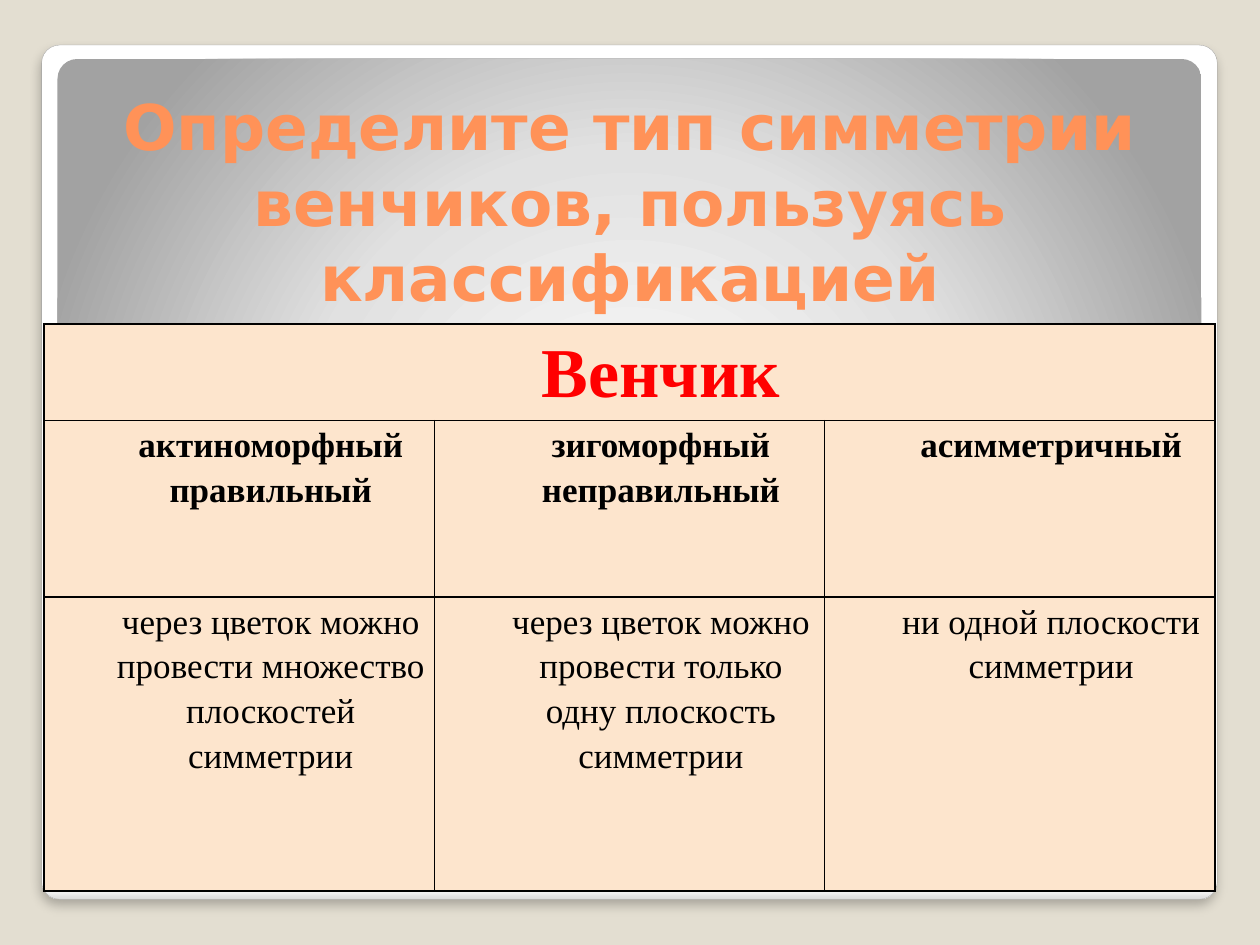
from pptx import Presentation
from pptx.dml.color import RGBColor
from pptx.enum.shapes import MSO_SHAPE
from pptx.enum.text import MSO_ANCHOR, PP_ALIGN
from pptx.oxml import parse_xml
from pptx.oxml.ns import nsdecls
from pptx.util import Cm, Pt

ROUNDED = MSO_SHAPE.ROUNDED_RECTANGLE
CENTER = PP_ALIGN.CENTER
BOTTOM = MSO_ANCHOR.BOTTOM

BEIGE = RGBColor(0xE3, 0xDE, 0xD1)
WHITE = RGBColor(0xFF, 0xFF, 0xFF)
NEAR_WHITE = RGBColor(0xF7, 0xF7, 0xF7)
PALE_GRAY = RGBColor(0xDA, 0xDA, 0xDA)
LIGHT_GRAY = RGBColor(0xE1, 0xE1, 0xE1)
MID_GRAY = RGBColor(0xA2, 0xA2, 0xA2)
EDGE_GRAY = RGBColor(0xA4, 0xA4, 0xA4)
ORANGE = RGBColor(0xFF, 0x92, 0x58)
PEACH = RGBColor(0xFD, 0xE5, 0xCD)
RED = RGBColor(0xFF, 0x00, 0x00)
BLACK = RGBColor(0x00, 0x00, 0x00)

TITLE_FONT = "DejaVu Sans"
TABLE_FONT = "Times New Roman"

TITLE = "Определите тип симметрии венчиков, пользуясь классификацией"
HEADING = "Венчик"
COROLLA_TYPES = [
    ("актиноморфный\nправильный",
     "через цветок можно провести множество плоскостей симметрии"),
    ("зигоморфный\nнеправильный",
     "через цветок можно провести только одну плоскость симметрии"),
    ("асимметричный", "ни одной плоскости симметрии"),
]
ROW_HEIGHTS = (1.91, 3.56, 5.92)

LINEAR_DOWN = '<a:lin ang="5400000" scaled="0"/>'
RADIAL_FROM_BELOW = (
    '<a:path path="circle">'
    '<a:fillToRect l="50000" t="175000" r="50000" b="-75000"/></a:path>'
)


def style_text(para, font_name, size, color, bold):
    para.alignment = CENTER
    for span in para.runs:
        span.font.name = font_name
        span.font.size = Pt(size)
        span.font.color.rgb = color
        span.font.bold = bold


def add_gradient_panel(page, box, rounding, stops, direction):
    panel = page.shapes.add_shape(ROUNDED, *map(Cm, box))
    panel.adjustments[0] = rounding
    panel.shadow.inherit = False
    panel.line.fill.background()
    stop_xml = "".join(
        f'<a:gs pos="{percent * 1000}"><a:srgbClr val="{color}"/></a:gs>'
        for percent, color in stops
    )
    panel._element.spPr.insert(2, parse_xml(
        f'<a:gradFill {nsdecls("a")} rotWithShape="1">'
        f'<a:gsLst>{stop_xml}</a:gsLst>{direction}</a:gradFill>'
    ))
    return panel


def add_card(page, box):
    left, top, width, height = box
    card = add_gradient_panel(
        page, box, 0.021,
        [(0, WHITE), (98, WHITE), (99, NEAR_WHITE), (100, PALE_GRAY)],
        LINEAR_DOWN,
    )
    card.line.color.rgb = EDGE_GRAY
    card.line.width = Pt(0.16)
    effects = card._element.spPr.find("{*}effectLst")
    effects.append(parse_xml(
        f'<a:outerShdw {nsdecls("a")} blurRad="{Pt(6)}" dist="{Pt(4)}" '
        f'dir="5400000" algn="tl" rotWithShape="0">'
        f'<a:srgbClr val="{BLACK}"><a:alpha val="25000"/></a:srgbClr>'
        f'</a:outerShdw>'
    ))
    add_gradient_panel(
        page, (left + 0.32, top + 0.28, width - 0.64, height / 2), 0.046,
        [(0, WHITE), (55, LIGHT_GRAY), (100, MID_GRAY)],
        RADIAL_FROM_BELOW,
    )


def add_title(page, box):
    title = page.shapes.add_textbox(*map(Cm, box))
    frame = title.text_frame
    frame.word_wrap = True
    frame.vertical_anchor = BOTTOM
    frame.margin_left = frame.margin_right = frame.margin_top = Cm(0.13)
    frame.margin_bottom = Cm(1.66)
    frame.text = TITLE
    style_text(frame.paragraphs[0], TITLE_FONT, 36, ORANGE, True)


def style_cell(cell):
    properties = cell._tc.get_or_add_tcPr()
    for side in ("lnL", "lnR", "lnT", "lnB"):
        properties.append(parse_xml(
            f'<a:{side} {nsdecls("a")} w="{Pt(1)}"><a:solidFill>'
            f'<a:srgbClr val="{BLACK}"/></a:solidFill></a:{side}>'
        ))
    cell.fill.solid()
    cell.fill.fore_color.rgb = PEACH
    cell.margin_left = cell.margin_right = Cm(0.17)
    cell.margin_top = cell.margin_bottom = 0


def fill_cell(cell, text, size, color, bold):
    cell.text_frame.text = text
    for para in cell.text_frame.paragraphs:
        style_text(para, TABLE_FONT, size, color, bold)
        para.line_spacing = 1.15
        indents = para._p.get_or_add_pPr()
        indents.set("marL", str(Cm(1.27)))
        indents.set("indent", "0")


def add_corolla_table(page, box):
    table = page.shapes.add_table(
        len(ROW_HEIGHTS), len(COROLLA_TYPES), *map(Cm, box)
    ).table
    for row, height in zip(table.rows, ROW_HEIGHTS):
        row.height = Cm(height)
    for cell in table.iter_cells():
        style_cell(cell)
    table.cell(0, 0).merge(table.cell(0, len(COROLLA_TYPES) - 1))
    fill_cell(table.cell(0, 0), HEADING, 40, RED, True)
    for column, (name, description) in enumerate(COROLLA_TYPES):
        fill_cell(table.cell(1, column), name, 20, BLACK, True)
        fill_cell(table.cell(2, column), description, 20, BLACK, False)


def main():
    deck = Presentation()
    deck.slide_width = Cm(25.4)
    deck.slide_height = Cm(19.05)
    page = deck.slides.add_slide(deck.slide_layouts[6])
    page.background.fill.solid()
    page.background.fill.fore_color.rgb = BEIGE
    add_card(page, (0.84, 0.91, 23.7, 17.22))
    add_title(page, (1.9, 2.92, 21.6, 5.08))
    add_corolla_table(page, (0.89, 6.53, 23.6, sum(ROW_HEIGHTS)))
    deck.save("out.pptx")


if __name__ == "__main__":
    main()
